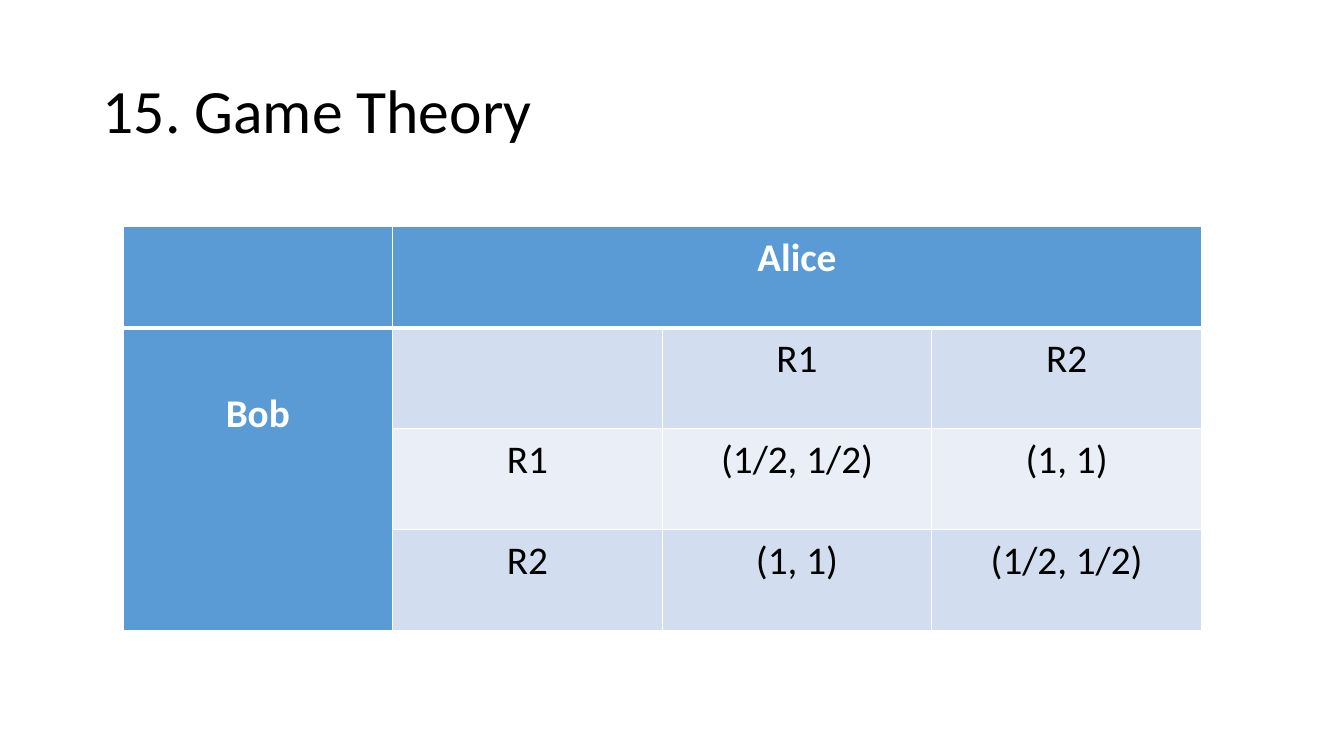
import pptx
import pptx.util
import pptx.dml.color
import pptx.enum.text
import pptx.oxml.ns
from lxml import etree

THEME = {
    "font": "Calibri", "title_size": 44, "cell_size": 28,
    "text": "000000", "white": "FFFFFF", "header": "5B9BD5",
    "bands": ("D2DEEF", "EAEFF7"), "line": 1, "heavy_line": 3,
}
ALIGN = pptx.enum.text.PP_ALIGN
ANCHOR = pptx.enum.text.MSO_ANCHOR


def assign(obj, values):
    for name, value in values.items():
        setattr(obj, name, value)


class Deck:
    """Build slides in one style, with lengths in percent of the slide."""

    def __init__(self, theme):
        self.theme = theme
        self.prs = pptx.Presentation()
        assign(self.prs, {"slide_width": pptx.util.Inches(13.33),
                          "slide_height": pptx.util.Inches(7.5)})
        self.s = self.prs.slides.add_slide(self.prs.slide_layouts[5])

    def box(self, left, top, width, height):
        w, h = self.prs.slide_width, self.prs.slide_height
        return [int(share * full / 100) for share, full in
                ((left, w), (top, h), (width, w), (height, h))]

    def add_text(self, tf, text, size, color, bold, align, spacing):
        p = tf.paragraphs[0]
        assign(p, {"alignment": align, "line_spacing": spacing})
        r = p.add_run()
        r.text = text
        assign(r.font, {"name": self.theme["font"], "size": pptx.util.Pt(size), "bold": bold})
        r.font.color.rgb = pptx.dml.color.RGBColor.from_string(color)

    def title(self, text, *area):
        sp = self.s.shapes.title
        assign(sp, dict(zip(("left", "top", "width", "height"), self.box(*area))))
        tf = sp.text_frame
        assign(tf, {"vertical_anchor": ANCHOR.MIDDLE, "word_wrap": True,
                    "auto_size": pptx.enum.text.MSO_AUTO_SIZE.NONE})
        self.add_text(tf, text, self.theme["title_size"], self.theme["text"],
                      False, ALIGN.LEFT, 0.9)

    def borders(self, cell, widths):
        qn = pptx.oxml.ns.qn
        tc_pr = cell._tc.get_or_add_tcPr()
        for side, width in widths.items():
            ln = etree.SubElement(tc_pr, qn(f"a:ln{side}"), w=str(pptx.util.Pt(width)))
            fill = etree.SubElement(ln, qn("a:solidFill"))
            etree.SubElement(fill, qn("a:srgbClr"), val=self.theme["white"])

    def cell(self, cell, text, row, col):
        t = self.theme
        is_header = row == 0 or col == 0
        widths = dict.fromkeys("LRTB", t["line"])
        if row < 2:
            widths["TB"[row == 0]] = t["heavy_line"]
        self.borders(cell, widths)
        cell.fill.solid()
        color = t["header"] if is_header else t["bands"][(row - 1) % 2]
        cell.fill.fore_color.rgb = pptx.dml.color.RGBColor.from_string(color)
        inset = pptx.util.Inches(0.07)
        assign(cell, {"margin_left": inset, "margin_right": inset, "margin_top": 0,
                      "margin_bottom": 0, "vertical_anchor": ANCHOR.TOP})
        if text:
            self.add_text(cell.text_frame, text, t["cell_size"],
                          t["white"] if is_header else t["text"],
                          is_header, ALIGN.CENTER, 1.15)

    def table(self, rows, merges, *area):
        table = self.s.shapes.add_table(len(rows), len(rows[0]), *self.box(*area)).table
        for i, row in enumerate(rows):
            for j, text in enumerate(row):
                self.cell(table.cell(i, j), text, i, j)
        for first, last in merges:
            table.cell(*first).merge(table.cell(*last))
        return table


def main():
    deck = Deck(THEME)
    deck.title("15. Game Theory", 6.9, 5.33, 86.25, 19.33)
    payoffs = [
        ["", "Alice", "", ""],
        ["Bob", "", "R1", "R2"],
        ["", "R1", "(1/2, 1/2)", "(1, 1)"],
        ["", "R2", "(1, 1)", "(1/2, 1/2)"],
    ]
    merges = [((0, 1), (0, 3)), ((1, 0), (3, 0))]
    table = deck.table(payoffs, merges, 9.15, 30, 80.25, 53.4)
    table.cell(1, 0).margin_top = pptx.util.Inches(0.55)
    deck.prs.save("out.pptx")


if __name__ == "__main__":
    main()
